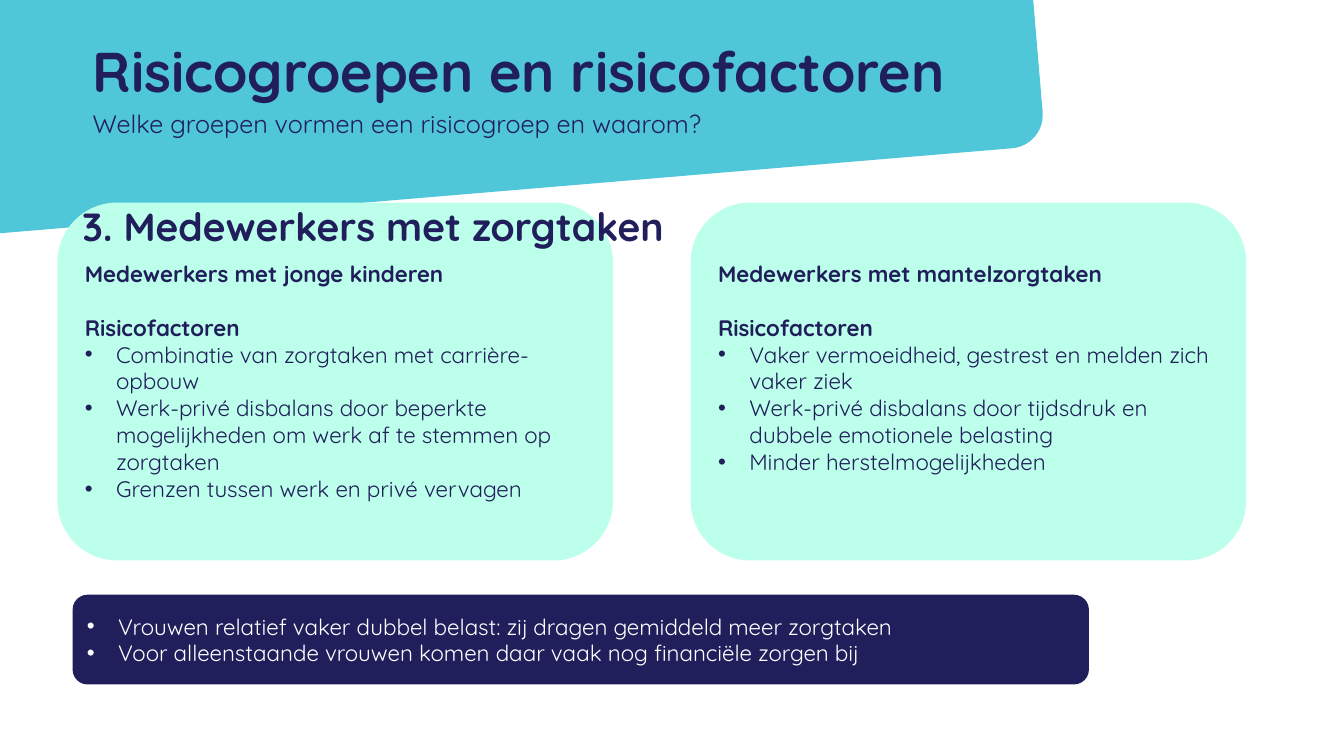
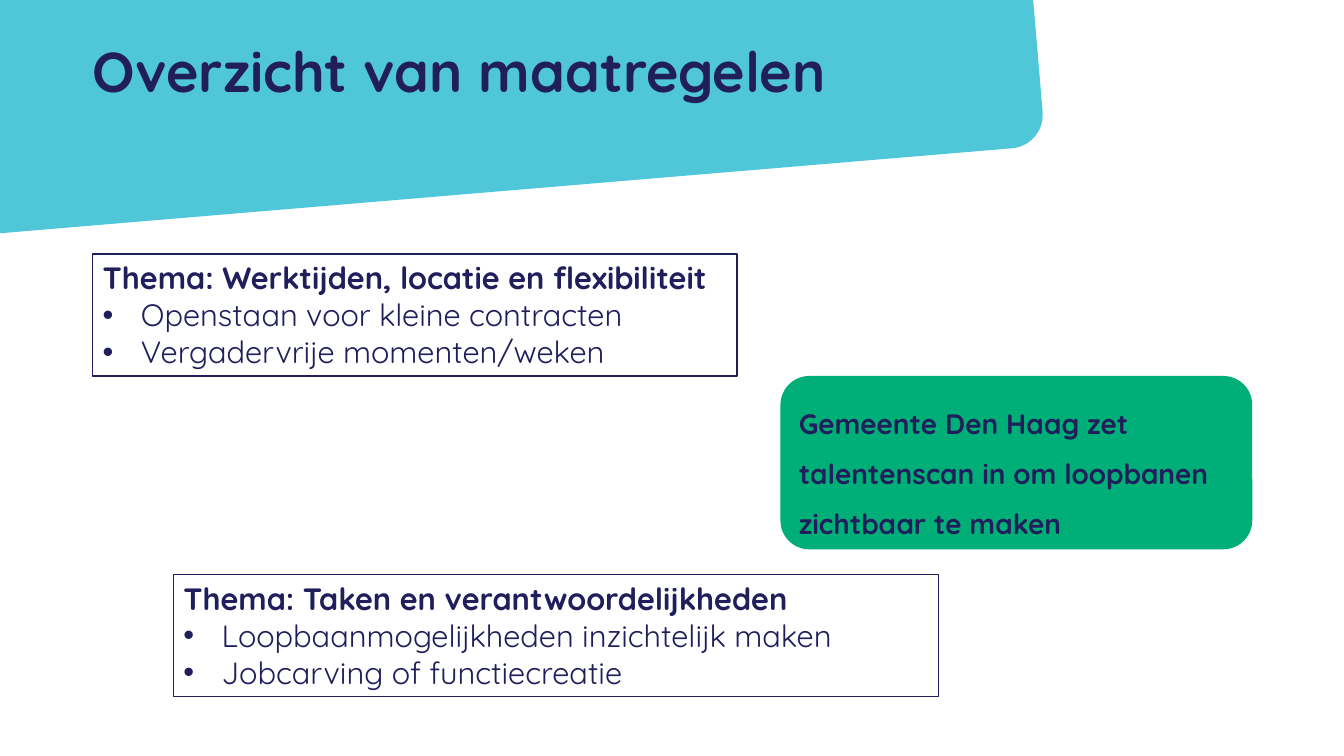
"""Build two slides on risk groups and measures for employees with care tasks."""
from lxml.etree import SubElement
from pptx import Presentation
from pptx.dml.color import RGBColor
from pptx.enum.shapes import MSO_SHAPE
from pptx.enum.text import MSO_ANCHOR, PP_ALIGN
from pptx.oxml.ns import qn
from pptx.util import Inches, Pt

FONT = "Quicksand"
NAVY = RGBColor(0x20, 0x1E, 0x5B)
CYAN = RGBColor(0x50, 0xC6, 0xD9)
MINT = RGBColor(0xBC, 0xFF, 0xEA)
GREEN = RGBColor(0x00, 0xAE, 0x78)
WHITE = RGBColor(0xFF, 0xFF, 0xFF)

RISK_TITLE = "Risicogroepen en risicofactoren"
RISK_SUBTITLE = "Welke groepen vormen een risicogroep en waarom?"
RISK_HEADING = "3. Medewerkers met zorgtaken"
FACTORS = "Risicofactoren"
GROUPS = [
    ("Medewerkers met jonge kinderen", [
        "Combinatie van zorgtaken met carrière-opbouw",
        "Werk-privé disbalans door beperkte mogelijkheden om werk af te stemmen op zorgtaken",
        "Grenzen tussen werk en privé vervagen",
    ]),
    ("Medewerkers met mantelzorgtaken", [
        "Vaker vermoeidheid, gestrest en melden zich vaker ziek",
        "Werk-privé disbalans door tijdsdruk en dubbele emotionele belasting",
        "Minder herstelmogelijkheden",
    ]),
]
WOMEN = [
    "Vrouwen relatief vaker dubbel belast: zij dragen gemiddeld meer zorgtaken",
    "Voor alleenstaande vrouwen komen daar vaak nog financiële zorgen bij",
]

MEASURES_TITLE = "Overzicht van maatregelen"
THEMES = [
    ((0.92, 2.52, 6.39, 1.21), "Thema: Werktijden, locatie en flexibiliteit",
     ["Openstaan voor kleine contracten", "Vergadervrije momenten/weken"]),
    ((1.72, 5.7, 7.59, 1.21), "Thema: Taken en verantwoordelijkheden",
     ["Loopbaanmogelijkheden inzichtelijk maken", "Jobcarving of functiecreatie"]),
]
EXAMPLE = "Gemeente Den Haag zet talentenscan in om loopbanen zichtbaar te maken"

CARD_LEFT, CARD_TOP, CARD_W, CARD_H, CARD_STEP = 0.57, 2.01, 5.51, 3.55, 6.28


def add_box(s, kind, at, fill, line=None):
    sp = s.shapes.add_shape(kind, *map(Inches, at))
    sp.shadow.inherit = False
    sp.fill.solid()
    sp.fill.fore_color.rgb = fill
    if line is None:
        sp.line.fill.background()
    else:
        sp.line.color.rgb = line
        sp.line.width = Pt(1)
    sp.text_frame.vertical_anchor = MSO_ANCHOR.TOP
    return sp


def add_text_box(s, at, text, size, bold=False, inset=None):
    tf = s.shapes.add_textbox(*map(Inches, at)).text_frame
    tf.word_wrap = True
    if inset is not None:
        tf.margin_left = tf.margin_right = tf.margin_top = tf.margin_bottom = Inches(inset)
    return add_line(tf, text, size, bold)


def add_line(tf, text, size, bold=False, color=NAVY, indent=None):
    p = tf.paragraphs[0]
    if p.runs:
        p = tf.add_paragraph()
    p.alignment = PP_ALIGN.LEFT
    if indent:
        pPr = p._p.get_or_add_pPr()
        pPr.set("marL", str(Inches(indent)))
        pPr.set("indent", str(-Inches(indent)))
        SubElement(pPr, qn("a:buFont"), typeface="Arial")
        SubElement(pPr, qn("a:buChar"), char="•")
    r = p.add_run()
    r.text = text
    r.font.name = FONT
    r.font.size = Pt(size)
    r.font.bold = bold
    r.font.color.rgb = color
    return p


def add_bullets(tf, items, size, indent, color=NAVY):
    for item in items:
        add_line(tf, item, size, color=color, indent=indent)


def add_slide(prs, title, subtitle=None):
    s = prs.slides.add_slide(prs.slide_layouts[6])
    band = add_box(s, MSO_SHAPE.ROUNDED_RECTANGLE, (-1, -0.92, 11.27, 2.84), CYAN)
    band.adjustments[0] = 0.117
    band.rotation = 355.2
    add_text_box(s, (0.92, 0.36, 11.5, 0.79), title, 40, True, inset=0)
    if subtitle:
        p = add_text_box(s, (0.92, 1.11, 11.5, 0.79), subtitle, 18, inset=0)
        p.line_spacing = 0.9
    return s


def add_risk_slide(prs):
    s = add_slide(prs, RISK_TITLE, RISK_SUBTITLE)
    for i, (group, factors) in enumerate(GROUPS):
        at = (CARD_LEFT + i * CARD_STEP, CARD_TOP, CARD_W, CARD_H)
        tf = add_box(s, MSO_SHAPE.ROUNDED_RECTANGLE, at, MINT).text_frame
        tf.margin_top = Inches(0.4)
        add_line(tf, group, 16, True)
        add_line(tf, FACTORS, 16, True).space_before = Pt(19)
        add_bullets(tf, factors, 16, 0.31)
    tf = add_box(s, MSO_SHAPE.ROUNDED_RECTANGLE, (0.72, 5.9, 10.08, 0.89), NAVY).text_frame
    tf.vertical_anchor = MSO_ANCHOR.MIDDLE
    add_bullets(tf, WOMEN, 16, 0.31, WHITE)
    add_text_box(s, (0.72, 1.96, 10.96, 0.57), RISK_HEADING, 28, True)


def add_measures_slide(prs):
    s = add_slide(prs, MEASURES_TITLE)
    for at, theme, measures in THEMES:
        tf = add_box(s, MSO_SHAPE.RECTANGLE, at, WHITE, NAVY).text_frame
        add_line(tf, theme, 22, True)
        add_bullets(tf, measures, 22, 0.38)
    example = add_box(s, MSO_SHAPE.ROUNDED_RECTANGLE, (7.74, 3.73, 4.68, 1.72), GREEN)
    add_line(example.text_frame, EXAMPLE, 20, True).line_spacing = 1.5


def main():
    prs = Presentation()
    prs.slide_width, prs.slide_height = Inches(13.33), Inches(7.5)
    add_risk_slide(prs)
    add_measures_slide(prs)
    prs.save("out.pptx")


if __name__ == "__main__":
    main()
